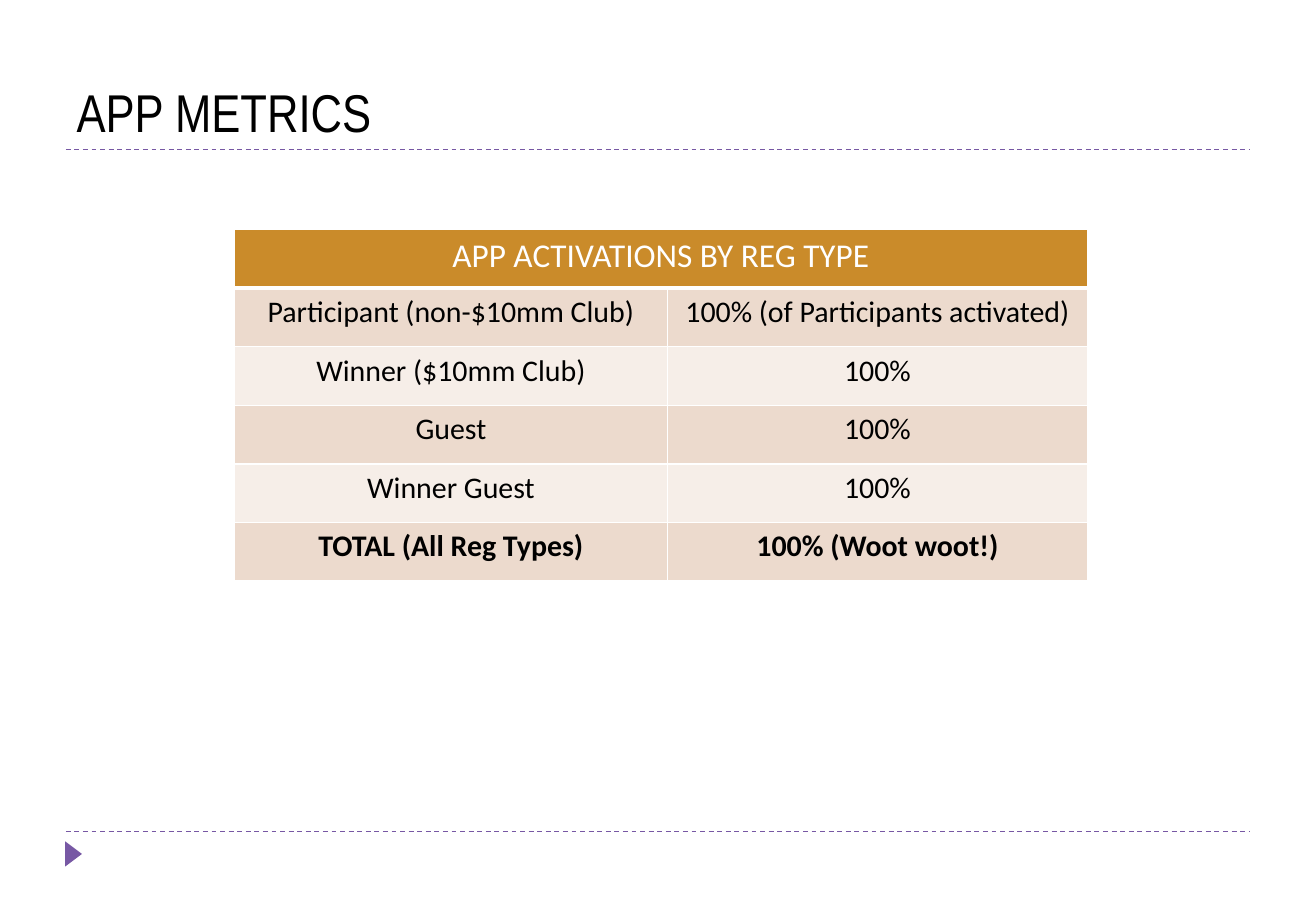
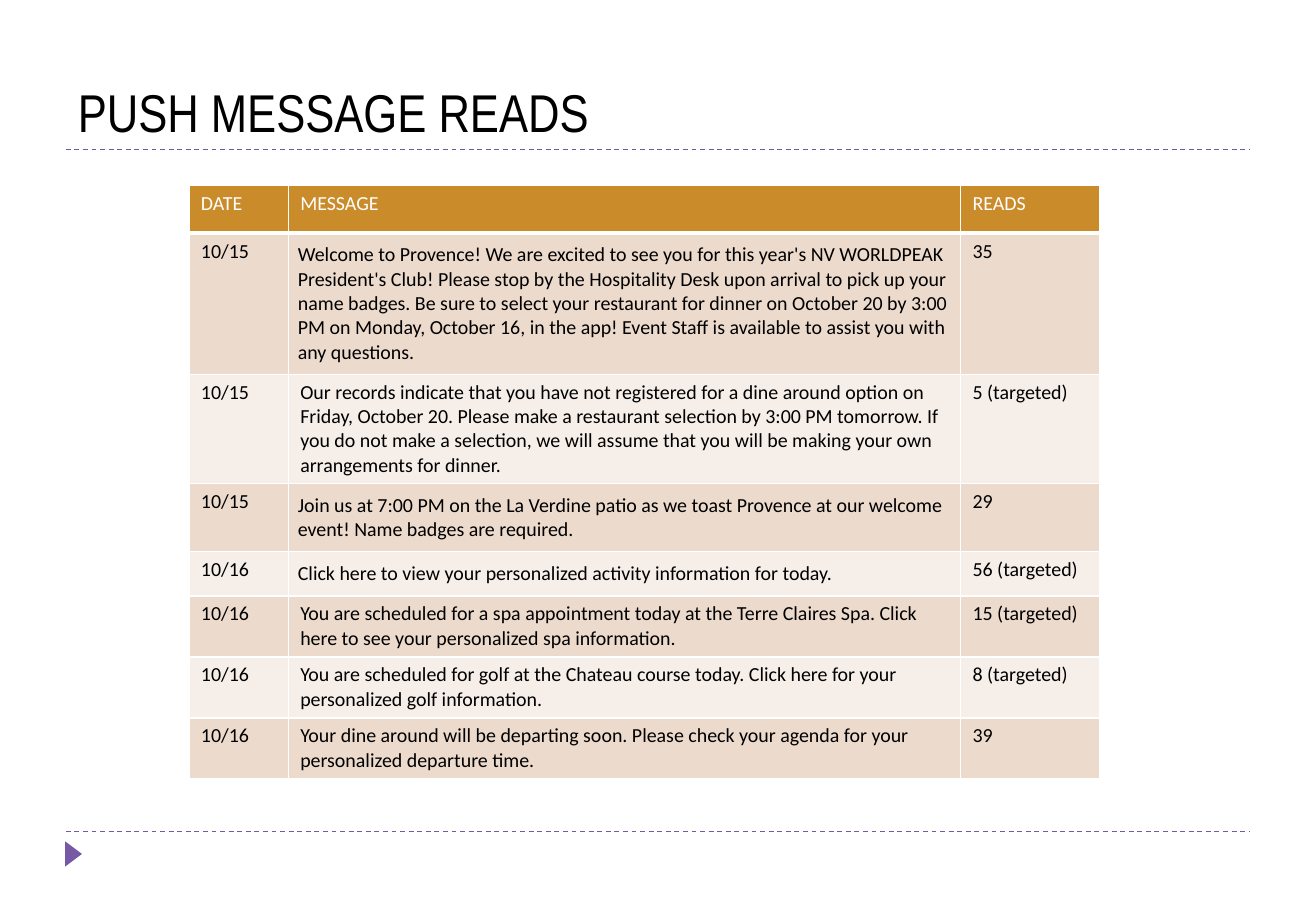
from lxml import etree
from pptx import Presentation
from pptx import util as u
from pptx.dml.color import RGBColor
from pptx.enum import dml, shapes, text
from pptx.oxml import ns

PX = 9144
COLORS = {
    "ink": "000000",
    "paper": "FFFFFF",
    "accent": "7758A4",
    "header": "CA8B2A",
    "odd": "ECDACD",
    "even": "F6EEE8",
}
TITLE_FONT, BODY_FONT = "Arial Narrow", "Calibri"
TITLE_ONLY = 5

ACTIVATIONS = [
    ("APP ACTIVATIONS BY REG TYPE", ""),
    ("Participant (non-$10mm Club)", "100% (of Participants activated)"),
    ("Winner ($10mm Club)", "100%"),
    ("Guest", "100%"),
    ("Winner Guest", "100%"),
    ("TOTAL (All Reg Types)", "100% (Woot woot!)"),
]
PUSH_MESSAGES = [
    ("DATE", "MESSAGE", "READS"),
    ("10/15", "Welcome to Provence! We are excited to see you for this year's NV WORLDPEAK "
     "President's Club! Please stop by the Hospitality Desk upon arrival to pick up your "
     "name badges. Be sure to select your restaurant for dinner on October 20 by 3:00 PM "
     "on Monday, October 16, in the app! Event Staff is available to assist you with any "
     "questions.", "35"),
    ("10/15", "Our records indicate that you have not registered for a dine around option on "
     "Friday, October 20. Please make a restaurant selection by 3:00 PM tomorrow. If you "
     "do not make a selection, we will assume that you will be making your own "
     "arrangements for dinner.", "5 (targeted)"),
    ("10/15", "Join us at 7:00 PM on the La Verdine patio as we toast Provence at our welcome "
     "event! Name badges are required.", "29"),
    ("10/16", "Click here to view your personalized activity information for today.",
     "56 (targeted)"),
    ("10/16", "You are scheduled for a spa appointment today at the Terre Claires Spa. Click "
     "here to see your personalized spa information.", "15 (targeted)"),
    ("10/16", "You are scheduled for golf at the Chateau course today. Click here for your "
     "personalized golf information.", "8 (targeted)"),
    ("10/16", "Your dine around will be departing soon. Please check your agenda for your "
     "personalized departure time.", "39"),
]


def px(length):
    """Turn whole pixels into EMU."""
    return u.Emu(length * PX)


def rgb(name):
    """Look up a colour of the palette."""
    return RGBColor.from_string(COLORS[name])


def write(frame, words, font=BODY_FONT, size=12, color="ink", bold=False,
          align=text.PP_ALIGN.LEFT):
    """Write one formatted paragraph into a text frame."""
    paragraph = frame.paragraphs[0]
    paragraph.alignment = align
    run = paragraph.add_run()
    run.text = words
    run.font.name, run.font.size, run.font.bold = font, u.Pt(size), bold
    run.font.color.rgb = rgb(color)


def draw_rule(slide, left, top, width):
    """Draw a dashed horizontal rule."""
    rule = slide.shapes.add_connector(
        shapes.MSO_CONNECTOR.STRAIGHT, px(left), px(top), px(left + width), px(top))
    rule.line.color.rgb = rgb("accent")
    rule.line.width = u.Pt(0.75)
    rule.line.dash_style = dml.MSO_LINE.DASH
    etree.SubElement(rule._element.spPr, ns.qn("a:effectLst"))


def draw_footer(slide, left, top, width):
    """Draw the footer rule with the page marker below it."""
    draw_rule(slide, left, top, width)
    marker = slide.shapes.add_shape(
        shapes.MSO_SHAPE.ISOSCELES_TRIANGLE, px(left - 4), px(top + 12), px(21), px(14))
    marker.rotation = 90
    marker.shadow.inherit = False
    marker.fill.solid()
    marker.fill.fore_color.rgb = rgb("accent")
    marker.line.fill.background()


def place_title(slide, words, box):
    """Move and format the title placeholder."""
    title = slide.shapes.title
    title.left, title.top, title.width, title.height = map(px, box)
    frame = title.text_frame
    frame.vertical_anchor = text.MSO_ANCHOR.BOTTOM
    frame.auto_size = text.MSO_AUTO_SIZE.NONE
    write(frame, words, font=TITLE_FONT, size=32)


def add_titled_slide(deck, words, title_box):
    """Add a slide with its title, rules and page marker."""
    slide = deck.slides.add_slide(deck.slide_layouts[TITLE_ONLY])
    place_title(slide, words, title_box)
    draw_rule(slide, 55, 125, 990)
    draw_footer(slide, 55, 695, 990)
    return slide


def style_cell(cell, fill, bottom_width):
    """Give a cell white borders and a plain fill."""
    properties = cell._tc.get_or_add_tcPr()
    for side, width in (("L", 1), ("R", 1), ("T", 1), ("B", bottom_width)):
        border = etree.SubElement(properties, ns.qn(f"a:ln{side}"), w=str(u.Pt(width)))
        solid = etree.SubElement(border, ns.qn("a:solidFill"))
        etree.SubElement(solid, ns.qn("a:srgbClr"), val=COLORS["paper"])
    cell.fill.solid()
    cell.fill.fore_color.rgb = rgb(fill)


def pad_cell(cell, margin):
    """Centre a cell vertically with an even margin."""
    cell.vertical_anchor = text.MSO_ANCHOR.MIDDLE
    cell.margin_left = cell.margin_right = px(margin)
    cell.margin_top = cell.margin_bottom = px(margin)


def add_grid(slide, records, left, top, widths, heights, header_size=12, **body):
    """Add a table with a header and alternating row fills."""
    grid = slide.shapes.add_table(len(records), len(widths), px(left), px(top),
                                  px(sum(widths)), px(sum(heights))).table
    grid.horz_banding = False
    for column, width in zip(grid.columns, widths):
        column.width = px(width)
    for index, (record, height) in enumerate(zip(records, heights)):
        grid.rows[index].height = px(height)
        header = index == 0
        fill = "header" if header else "odd" if index % 2 else "even"
        look = {**body, "size": header_size, "color": "paper"} if header else body
        for position, words in enumerate(record):
            cell = grid.cell(index, position)
            style_cell(cell, fill, 3 if header else 1)
            if words:
                write(cell.text_frame, words, **look)
    return grid


def build_metrics(deck):
    """Build the slide on app activations."""
    slide = add_titled_slide(deck, "APP METRICS", (54, 33, 990, 92))
    grid = add_grid(slide, ACTIVATIONS, 196, 192, (362, 351), [49] * len(ACTIVATIONS),
                    header_size=20, size=18, align=text.PP_ALIGN.CENTER)
    grid.cell(0, 0).merge(grid.cell(0, 1))
    for total in grid.rows[len(ACTIVATIONS) - 1].cells:
        total.text_frame.paragraphs[0].runs[0].font.bold = True


def build_push_reads(deck):
    """Build the slide on push message reads."""
    slide = add_titled_slide(deck, "PUSH MESSAGE READS", (55, 17, 990, 108))
    grid = add_grid(slide, PUSH_MESSAGES, 158, 155, (83, 562, 116),
                    (40, 118, 91, 57, 37, 51, 51, 50))
    for padded in (1, 3, 4):
        pad_cell(grid.cell(padded, 1), 8)


def main():
    """Build and save the deck."""
    deck = Presentation()
    deck.slide_width, deck.slide_height = px(1100), px(750)
    build_metrics(deck)
    build_push_reads(deck)
    deck.save("out.pptx")


if __name__ == "__main__":
    main()
